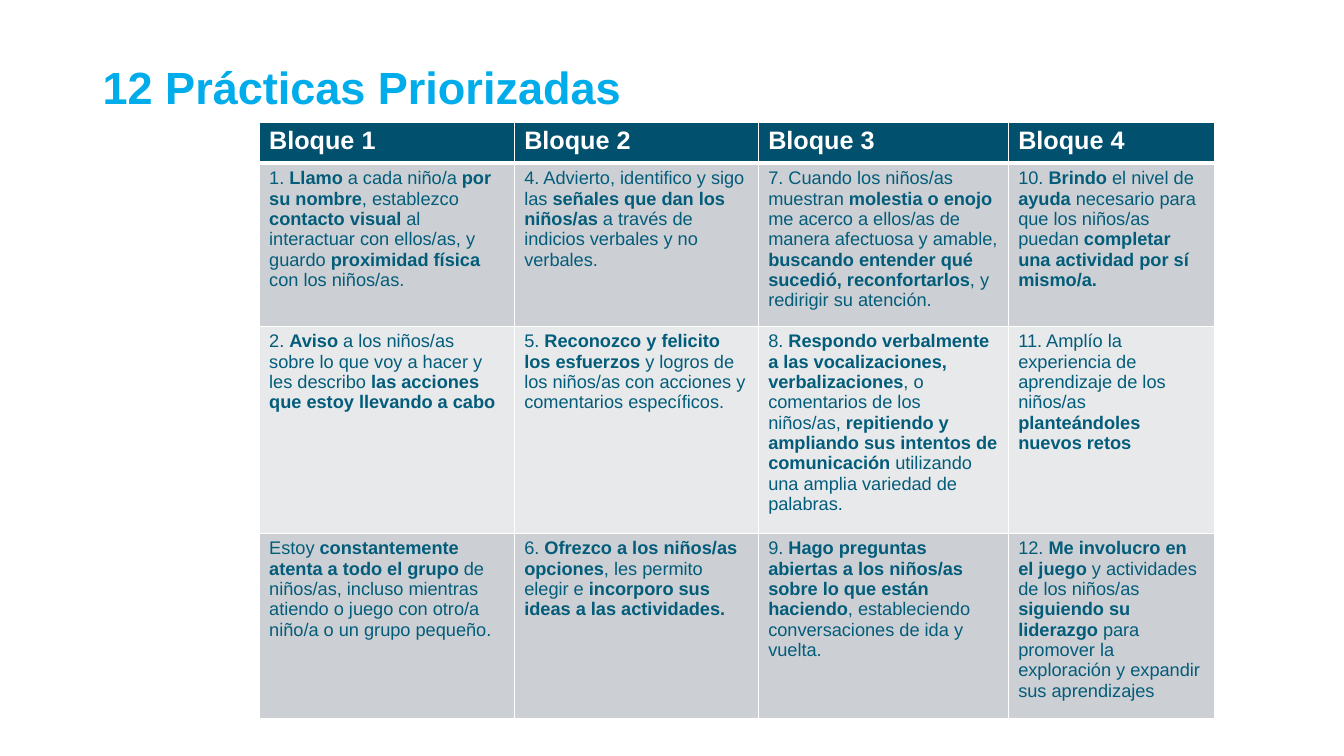
from pptx import Presentation
from pptx.dml.color import RGBColor
from pptx.enum.text import MSO_ANCHOR
from pptx.oxml import parse_xml
from pptx.oxml.ns import nsdecls
from pptx.util import Inches, Pt

CYAN = RGBColor(0x00, 0xAC, 0xE9)
NAVY = RGBColor(0x00, 0x50, 0x6E)
TEAL = RGBColor(0x03, 0x5C, 0x79)
WHITE = RGBColor(0xFF, 0xFF, 0xFF)
GREY = RGBColor(0xCC, 0xD0, 0xD5)
LIGHT = RGBColor(0xE7, 0xE9, 0xEB)

COL_WIDTHS = [2.53, 2.42, 2.48, 2.05]
ROW_HEIGHTS = [0.41, 1.5, 1.9, 1.7]
ROW_FILLS = [NAVY, GREY, LIGHT, GREY]

# Text between ** marks is bold.
ROWS = [
    ["**Bloque 1**", "**Bloque 2**", "**Bloque 3**", "**Bloque 4**"],
    [
        "1. **Llamo** a cada niño/a **por su nombre**, establezco **contacto visual **"
        "al interactuar con ellos/as, y guardo **proximidad física **con los niños/as.",
        "4. Advierto, identifico y sigo las **señales que dan los niños/as **"
        "a través de indicios verbales y no verbales.",
        "7. Cuando los niños/as muestran **molestia o enojo **me acerco a ellos/as "
        "de manera afectuosa y amable, **buscando entender qué sucedió, "
        "reconfortarlos**, y redirigir su atención.",
        "10. **Brindo** el nivel de **ayuda** necesario para que los niños/as puedan "
        "**completar una actividad por sí mismo/a.**",
    ],
    [
        "2. **Aviso** a los niños/as sobre lo que voy a hacer y les describo "
        "**las acciones que estoy llevando a cabo**",
        "5. **Reconozco y felicito los esfuerzos **y logros de los niños/as con "
        "acciones y comentarios específicos.",
        "8. **Respondo verbalmente a las vocalizaciones, verbalizaciones**, o "
        "comentarios de los niños/as, **repitiendo y ampliando sus intentos de "
        "comunicación **utilizando una amplia variedad de palabras.",
        "11. Amplío la experiencia de aprendizaje de los niños/as** planteándoles "
        "nuevos retos**",
    ],
    [
        "Estoy **constantemente atenta a todo el grupo **de niños/as, incluso "
        "mientras atiendo o juego con otro/a niño/a o un grupo pequeño.",
        "6. **Ofrezco a los niños/as opciones**, les permito elegir e "
        "**incorporo sus ideas a las actividades.**",
        "9. **Hago preguntas abiertas a los niños/as sobre lo que están haciendo**, "
        "estableciendo conversaciones de ida y vuelta.",
        "12. **Me involucro en el juego** y actividades de los niños/as "
        "**siguiendo su liderazgo **para promover la exploración y expandir sus "
        "aprendizajes",
    ],
]


def write_text(tf, text, size, color, font="Arial", line_spacing=None):
    """Fill the first paragraph, with the parts between ** marks in bold."""
    tf.word_wrap = True
    p = tf.paragraphs[0]
    p.line_spacing = line_spacing
    for i, part in enumerate(text.split("**")):
        if part:
            r = p.add_run()
            r.text = part
            r.font.name = font
            r.font.size = Pt(size)
            r.font.bold = i % 2 == 1
            r.font.color.rgb = color
    # The paragraph end takes the text size too, so that it adds no row height.
    p._p.append(parse_xml(f'<a:endParaRPr {nsdecls("a")} sz="{round(size * 100)}"/>'))


def set_borders(cell, **widths):
    """Draw white cell borders; widths in points, keyed by side L, R, T, B."""
    tc_pr = cell._tc.get_or_add_tcPr()
    for i, side in enumerate("LRTB"):
        width = Pt(widths.get(side, 1))
        tc_pr.insert(i, parse_xml(
            f'<a:ln{side} {nsdecls("a")} w="{width}"><a:solidFill>'
            f'<a:srgbClr val="{WHITE}"/></a:solidFill></a:ln{side}>'))


prs = Presentation()
prs.slide_width = Inches(13.33)
prs.slide_height = Inches(7.5)
s = prs.slides.add_slide(prs.slide_layouts[6])

title = s.shapes.add_textbox(Inches(0.92), Inches(0.37), Inches(11.78), Inches(0.81))
title.text_frame.vertical_anchor = MSO_ANCHOR.BOTTOM
write_text(title.text_frame, "**12 Prácticas Priorizadas**", size=32.2, color=CYAN,
           line_spacing=0.9)

table = s.shapes.add_table(
    len(ROW_HEIGHTS), len(COL_WIDTHS), Inches(2.57), Inches(1.21),
    Inches(sum(COL_WIDTHS)), Inches(sum(ROW_HEIGHTS))).table
for column, width in zip(table.columns, COL_WIDTHS):
    column.width = Inches(width)

for i, (texts, height, fill) in enumerate(zip(ROWS, ROW_HEIGHTS, ROW_FILLS)):
    table.rows[i].height = Inches(height)
    header = i == 0
    for j, text in enumerate(texts):
        cell = table.cell(i, j)
        cell.fill.solid()
        cell.fill.fore_color.rgb = fill
        set_borders(cell, B=3 if header else 1, T=3 if i == 1 else 1)
        write_text(cell.text_frame, text, size=18 if header else 13,
                   color=WHITE if header else TEAL)

prs.save("out.pptx")
